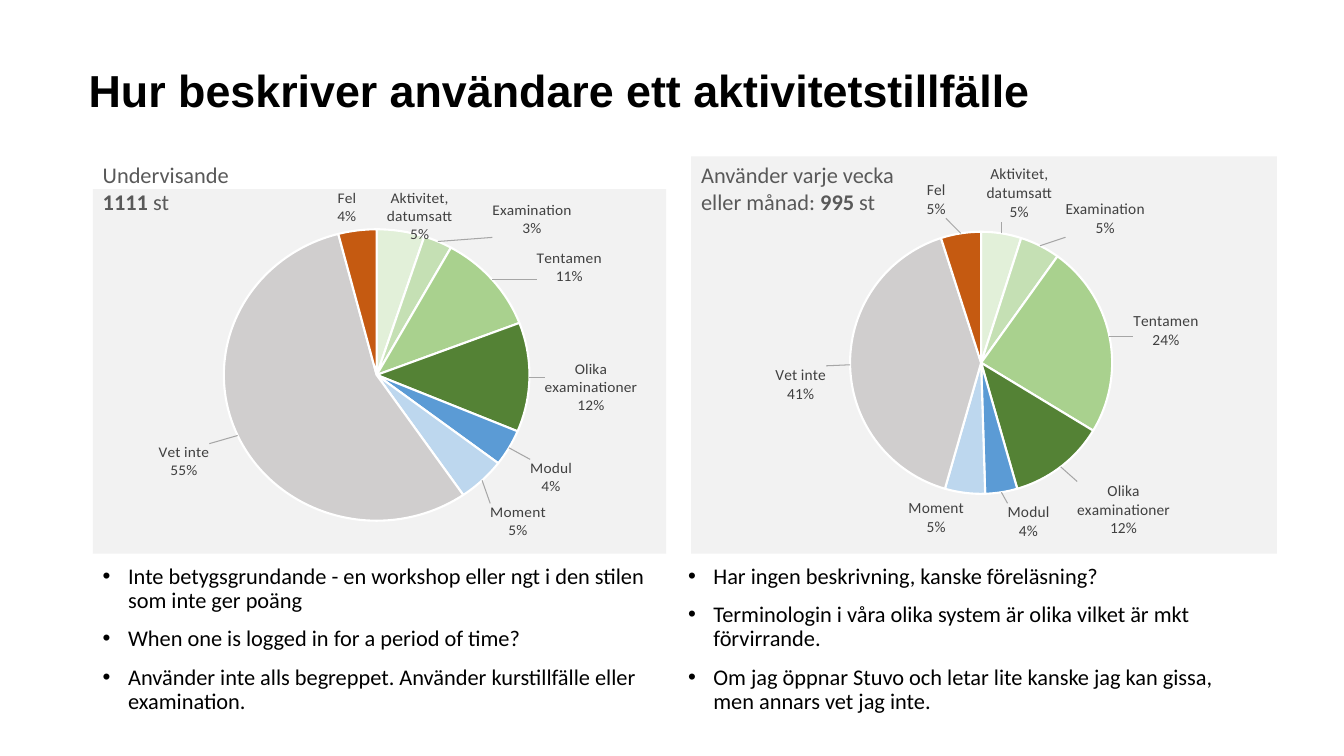
from lxml import etree
from pptx import Presentation
from pptx.chart.data import CategoryChartData
from pptx.dml.color import RGBColor
from pptx.enum.chart import XL_CHART_TYPE as ChartType, XL_LABEL_POSITION as LabelPos
from pptx.enum.text import MSO_ANCHOR as Anchor, MSO_AUTO_SIZE as AutoSize, PP_ALIGN as Align
from pptx.oxml import parse_xml
from pptx.oxml.ns import nsdecls, qn
from pptx.util import Cm, Pt

SLICES = [
    ("Aktivitet, datumsatt", "E2F0D9"),
    ("Examination", "C5E0B4"),
    ("Tentamen", "A9D18E"),
    ("Olika examinationer", "548235"),
    ("Modul", "5B9BD5"),
    ("Moment", "BDD7EE"),
    ("Vet inte", "D0CECE"),
    ("Fel", "C55A11"),
]
TEACHING = dict(
    box=(2.34, 4.32, 14.45, 9.63),
    plot=(0.22, 0.11, 0.55, 0.8),
    values=(5, 3, 11, 12, 4, 5, 55, 4),
    shifts={0: (-2.6, 3.1), 1: (9.1, 0.3), 2: (7, 2.6), 3: (1.6, 2.9),
            4: (2.8, 2.4), 5: (0.7, 5.2), 6: (-4, 1.6)},
    by_value=(6,),
)
FREQUENT = dict(
    box=(17.42, 3.94, 14.76, 10.01),
    plot=(0.27, 0.19, 0.45, 0.66),
    values=(5, 5, 24, 12, 4, 5, 41, 5),
    shifts={0: (-2.7, -1.5), 1: (3.9, -0.8), 2: (3.1, 3.5), 3: (2.2, 2.5),
            4: (0.9, 1.3), 6: (-3.1, 5), 7: (-2.4, -2.3)},
)
TEACHING_QUOTES = [
    "Inte betygsgrundande - en workshop eller ngt i den stilen som inte ger poäng",
    "When one is logged in for a period of time?",
    "Använder inte alls begreppet. Använder kurstillfälle eller examination.",
]
FREQUENT_QUOTES = [
    "Har ingen beskrivning, kanske föreläsning?",
    "Terminologin i våra olika system är olika vilket är mkt förvirrande.",
    "Om jag öppnar Stuvo och letar lite kanske jag kan gissa, men annars vet jag inte.",
]


def rgb(color):
    return RGBColor.from_string(color)


def set_font(font, size, color, name="Calibri", bold=False):
    font.size, font.name, font.bold = Pt(size), name, bold
    font.color.rgb = rgb(color)


def add_text(p, text, size=16, color="000000", name="Calibri", bold=False):
    r = p.add_run()
    r.text = text
    set_font(r.font, size, color, name, bold)


def add_box(slide, box):
    sp = slide.shapes.add_textbox(*map(Cm, box))
    sp.text_frame.word_wrap = True
    return sp.text_frame


def next_paragraph(tf, index):
    return tf.add_paragraph() if index else tf.paragraphs[0]


def add_caption(slide, box, lines):
    tf = add_box(slide, box)
    tf.auto_size = AutoSize.SHAPE_TO_FIT_TEXT
    for i, runs in enumerate(lines):
        p = next_paragraph(tf, i)
        for text, bold in runs:
            add_text(p, text, color="595959", bold=bold)


def add_bullets(slide, box, items):
    tf = add_box(slide, box)
    for i, item in enumerate(items):
        p = next_paragraph(tf, i)
        p.line_spacing = 0.9
        p.space_before = Pt(10 if i else 0)
        pPr = p._p.get_or_add_pPr()
        pPr.set("marL", str(Cm(0.64)))
        pPr.set("indent", str(-Cm(0.64)))
        etree.SubElement(pPr, qn("a:buFont")).set("typeface", "Arial")
        etree.SubElement(pPr, qn("a:buChar")).set("char", "•")
        add_text(p, item)


def add_title(slide, text):
    sp = slide.shapes.title
    sp.left, sp.top, sp.width, sp.height = map(Cm, (1.98, 1.6, 28.19, 2.03))
    tf = sp.text_frame
    tf.vertical_anchor = Anchor.TOP
    tf.word_wrap = True
    p = tf.paragraphs[0]
    p.alignment, p.line_spacing = Align.LEFT, 0.9
    add_text(p, text, size=32, name="Arial", bold=True)


def chart_xml(tag, body):
    return parse_xml(f'<c:{tag} {nsdecls("c", "a")}>{body}</c:{tag}>')


def manual_layout(**settings):
    body = "".join(f'<c:{k} val="{v}"/>' for k, v in settings.items())
    return chart_xml("layout", f"<c:manualLayout>{body}</c:manualLayout>")


def set_flags(label, by_value):
    shown = {"showVal": by_value, "showCatName": True, "showPercent": not by_value}
    for name, on in shown.items():
        label.find(qn(f"c:{name}")).set("val", str(int(on)))
    label.find(qn("c:showBubbleSize")).addnext(chart_xml("separator", "\n"))


def add_labels(series, shifts, by_value):
    labels = series.data_labels
    set_font(labels.font, 11, "404040")
    labels.position = LabelPos.OUTSIDE_END
    for i in shifts:
        label = series.points[i].data_label
        set_font(label.font, 11, "404040")
        label.position = LabelPos.OUTSIDE_END
    root = labels._element
    set_flags(root, False)
    for label in root.findall(qn("c:dLbl")):
        idx = label.find(qn("c:idx"))
        i = int(idx.get("val"))
        x, y = shifts[i]
        set_flags(label, i in by_value)
        if i in by_value:
            number = chart_xml("numFmt", "")
            number.set("formatCode", '0"%"')
            number.set("sourceLinked", "0")
            idx.addnext(number)
        idx.addnext(manual_layout(x=x / 100, y=y / 100))
    for old in root.findall(qn("c:showLeaderLines")):
        root.remove(old)
    leader = chart_xml("showLeaderLines", "")
    leader.set("val", "1")
    root.append(leader)
    root.append(chart_xml("leaderLines", '<c:spPr><a:ln w="9525"><a:solidFill>'
                          '<a:srgbClr val="A6A6A6"/></a:solidFill></a:ln></c:spPr>'))


def add_pie(slide, box, plot, values, shifts, by_value=()):
    data = CategoryChartData()
    data.categories = [name for name, _ in SLICES]
    data.add_series("Series 1", values)
    chart = slide.shapes.add_chart(ChartType.PIE, *map(Cm, box), data).chart
    chart.has_title = chart.has_legend = False
    set_font(chart.font, 10, "000000")
    pie = chart.plots[0]
    pie.vary_by_categories = True
    series = pie.series[0]
    for i, (_, color) in enumerate(SLICES):
        fmt = series.points[i].format
        fmt.fill.solid()
        fmt.fill.fore_color.rgb = rgb(color)
        fmt.line.color.rgb = rgb("FFFFFF")
        fmt.line.width = Pt(1.5)
    add_labels(series, shifts, by_value)

    root = chart._chartSpace.find(qn("c:chart"))
    root.addnext(chart_xml("spPr", '<a:solidFill><a:srgbClr val="F2F2F2"/></a:solidFill>'
                           '<a:ln><a:noFill/></a:ln>'))
    area = root.find(qn("c:plotArea"))
    for old in area.findall(qn("c:layout")):
        area.remove(old)
    x, y, w, h = plot
    area.insert(0, manual_layout(layoutTarget="inner", xMode="edge", yMode="edge",
                                 x=x, y=y, w=w, h=h))


def main():
    prs = Presentation()
    prs.slide_width, prs.slide_height = Cm(33.87), Cm(19.05)
    slide = prs.slides.add_slide(prs.slide_layouts[5])
    add_title(slide, "Hur beskriver användare ett aktivitetstillfälle")
    add_pie(slide, **TEACHING)
    add_pie(slide, **FREQUENT)
    add_caption(slide, (2.34, 3.94, 5.16, 1.63),
                [[("Undervisande", False)], [("1111 ", True), ("st", False)]])
    add_caption(slide, (17.42, 3.94, 5.79, 1.63),
                [[("Använder varje vecka", False)],
                 [("eller månad: ", False), ("995 ", True), ("st", False)]])
    add_bullets(slide, (2.34, 14.12, 14.45, 3.3), TEACHING_QUOTES)
    add_bullets(slide, (17.09, 14.12, 14.45, 3.3), FREQUENT_QUOTES)
    prs.save("out.pptx")


if __name__ == "__main__":
    main()
